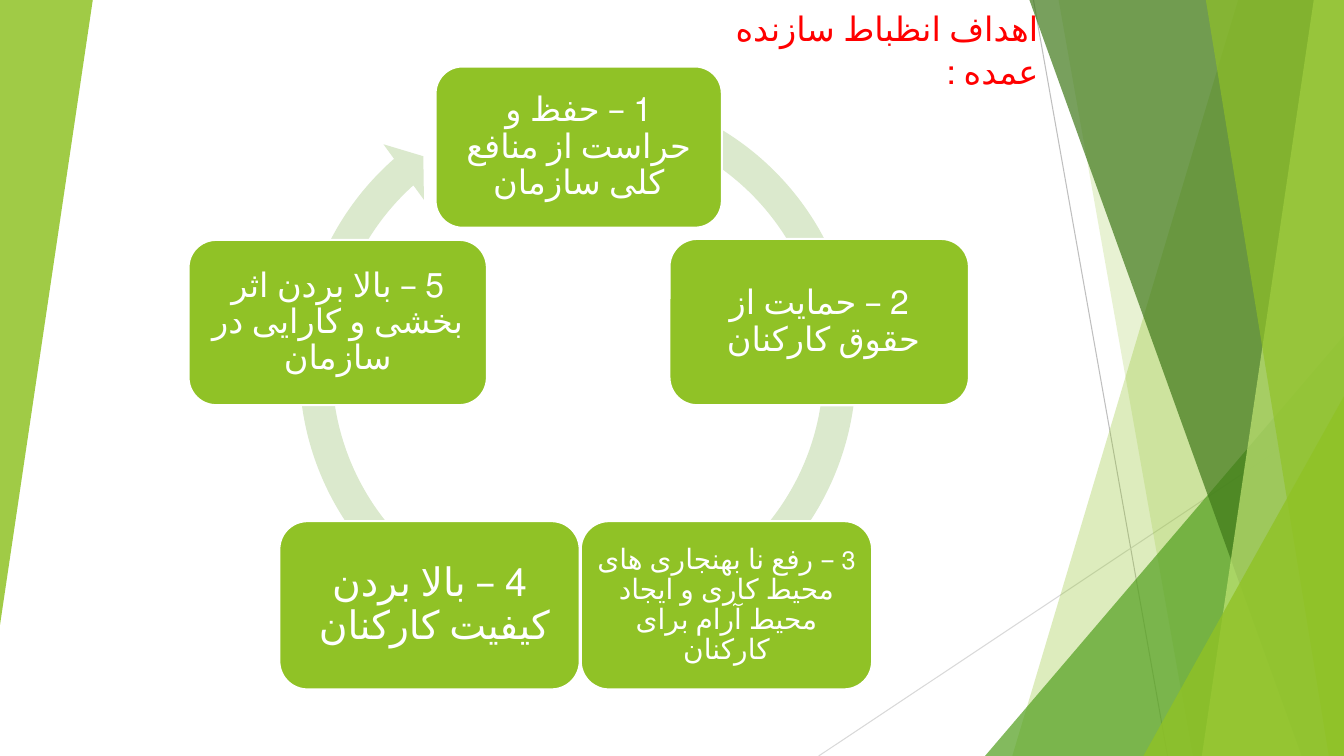
"""Build a slide showing five goals of constructive discipline as a cycle."""
from lxml import etree
from pptx import Presentation
from pptx.dml.color import RGBColor
from pptx.enum.lang import MSO_LANGUAGE_ID
from pptx.enum.shapes import MSO_CONNECTOR, MSO_SHAPE
from pptx.enum.text import MSO_ANCHOR, MSO_AUTO_SIZE, PP_ALIGN
from pptx.oxml.ns import qn
from pptx.util import Inches, Pt

STRAIGHT = MSO_CONNECTOR.STRAIGHT
TRIANGLE = MSO_SHAPE.ISOSCELES_TRIANGLE
ROUNDED = MSO_SHAPE.ROUNDED_RECTANGLE
CIRCULAR_ARROW = MSO_SHAPE.CIRCULAR_ARROW
MIDDLE, TOP = MSO_ANCHOR.MIDDLE, MSO_ANCHOR.TOP
CENTER, RIGHT = PP_ALIGN.CENTER, PP_ALIGN.RIGHT
NO_AUTOFIT = MSO_AUTO_SIZE.NONE
FARSI = MSO_LANGUAGE_ID.FARSI

GREEN = RGBColor(0x90, 0xC2, 0x26)
MID_GREEN = RGBColor(0x54, 0xA0, 0x21)
DARK_GREEN = RGBColor(0x3F, 0x78, 0x19)
LIGHT_GREEN = RGBColor(0xC0, 0xE4, 0x74)
PALE_GREEN = RGBColor(0xDB, 0xE9, 0xCD)
GRAY = RGBColor(0xBF, 0xBF, 0xBF)
LIGHT_GRAY = RGBColor(0xD9, 0xD9, 0xD9)
WHITE = RGBColor(0xFF, 0xFF, 0xFF)
RED = RGBColor(0xFF, 0x00, 0x00)
W, H = 13.33, 7.5


def paint(sp, color, opacity=100):
    sp.shadow.inherit = False
    sp.line.fill.background()
    sp.fill.solid()
    sp.fill.fore_color.rgb = color
    if opacity < 100:
        clr = sp.element.spPr.find(qn("a:solidFill"))[0]
        etree.SubElement(clr, qn("a:alpha")).set("val", str(opacity * 1000))


def write(sp, runs, align, anchor, spacing, font, color):
    tf = sp.text_frame
    tf.word_wrap = True
    tf.auto_size = NO_AUTOFIT
    tf.vertical_anchor = anchor
    p = tf.paragraphs[0]
    p.alignment = align
    p.line_spacing = spacing
    p._p.get_or_add_pPr().set("rtl", "1")
    for text, size in runs:
        r = p.add_run()
        r.text = text
        r.font.name = font
        r.font.size = Pt(size)
        r.font.color.rgb = color
        r.font.language_id = FARSI


prs = Presentation()
prs.slide_width, prs.slide_height = Inches(W), Inches(H)
s = prs.slides.add_slide(prs.slide_layouts[5])

lines = [(10.25, 0, 11.58, H, GRAY), (W, 4.03, 8.12, H, LIGHT_GRAY)]
for x1, y1, x2, y2, color in lines:
    cx = s.shapes.add_connector(STRAIGHT, Inches(x1), Inches(y1), Inches(x2), Inches(y2))
    cx.line.color.rgb = color
    cx.line.width = Pt(0.75)
    etree.SubElement(cx.element.spPr, qn("a:effectLst"))

# Each facet: kind, top-left x or triangle left, bottom-left x or triangle top, colour, opacity
facets = [
    ("band", 12.28, 10.04, GREEN, 30),
    ("band", 10.5, 11.83, GREEN, 20),
    ("triangle", 9.77, 3.33, MID_GREEN, 72),
    ("band", 10.21, 12.91, DARK_GREEN, 70),
    ("band", 13.03, 11.92, LIGHT_GREEN, 70),
    ("band", 11.96, 13.18, GREEN, 65),
    ("triangle", 11.34, 3.93, GREEN, 80),
]
for kind, a, b, color, opacity in facets:
    if kind == "band":
        fb = s.shapes.build_freeform(Inches(a), 0)
        corners = [(W, 0), (W, H), (b, H)]
        fb.add_line_segments([(Inches(x), Inches(y)) for x, y in corners])
        sp = fb.convert_to_shape()
    else:
        sp = s.shapes.add_shape(TRIANGLE, Inches(a), Inches(b), Inches(W - a), Inches(H - b))
        sp.adjustments[0] = 1
    paint(sp, color, opacity)

sp = s.shapes.add_shape(TRIANGLE, 0, 0, Inches(0.92), Inches(6.2))
sp.adjustments[0] = 1
sp.rotation = 180
paint(sp, GREEN, 85)

sp = s.shapes.add_shape(CIRCULAR_ARROW, Inches(2.79), Inches(0.71), Inches(5.88), Inches(5.88))
for i, value in enumerate([0.055, 3.307, 137.028, 174.307, 0.058]):
    sp.adjustments[i] = value
paint(sp, PALE_GREEN)

goals = [
    (4.32, 0.66, 2.84, 1.6, 0.1, [("1 – حفظ و حراست از منافع کلی سازمان", 24)]),
    (6.64, 2.37, 2.97, 1.65, 0.1, [("2 – حمایت از حقوق کارکنان ", 24)]),
    (5.76, 5.17, 2.89, 1.67, 0.07,
     [("3", 18), (" – رفع نا بهنجاری های محیط کاری و ایجاد محیط آرام برای کارکنان", 20)]),
    (2.77, 5.17, 2.98, 1.67, 0.12, [("4 – بالا بردن کیفیت کارکنان ", 28)]),
    (1.87, 2.38, 2.96, 1.64, 0.1, [("5 – بالا بردن اثر بخشی و کارایی در سازمان", 24)]),
]
for x, y, w, h, inset, runs in goals:
    sp = s.shapes.add_shape(ROUNDED, Inches(x), Inches(y), Inches(w), Inches(h))
    paint(sp, GREEN)
    sp.line.color.rgb = WHITE
    sp.line.width = Pt(1.5)
    tf = sp.text_frame
    tf.margin_left = tf.margin_right = tf.margin_top = tf.margin_bottom = Inches(inset)
    write(sp, runs, CENTER, MIDDLE, 0.9, "Lato", WHITE)

title = s.shapes.title
title.left, title.top, title.width, title.height = Inches(6.67), 0, Inches(3.73), Inches(0.53)
write(title, [("اهداف انظباط سازنده عمده : ", 24)], RIGHT, TOP, 1.07, "Calibri", RED)
title.element.getparent().append(title.element)

prs.save("out.pptx")
